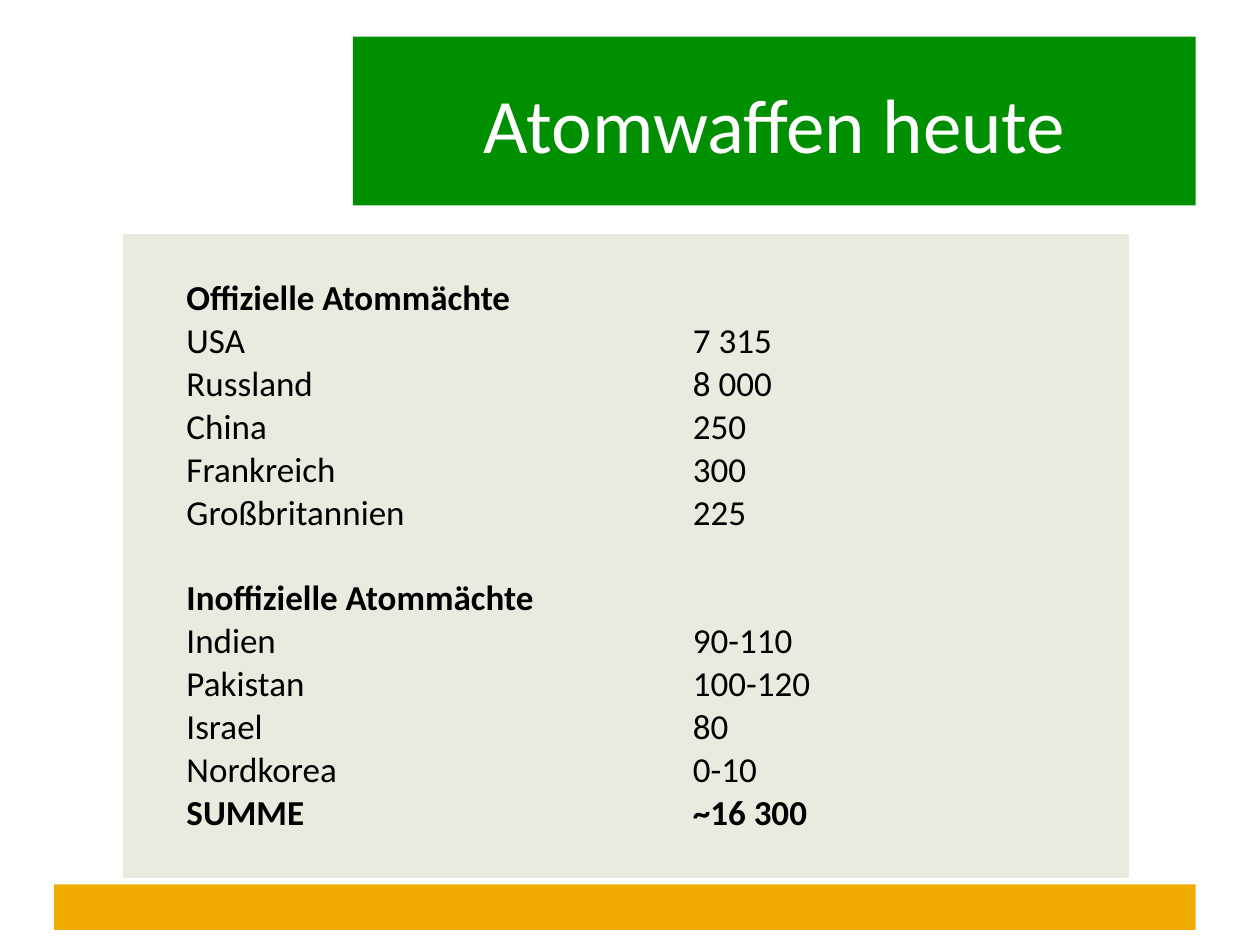
from pptx import Presentation
from pptx import util as u
from pptx.dml import color
from pptx.enum import shapes, text
from pptx.oxml import ns

COLORS = {
    "green": "008F00",
    "amber": "F0AB00",
    "panel": "EAEBDE",
    "black": "000000",
    "white": "FFFFFF",
}
PLAIN_TABLE_STYLE = "{2D5ABB26-0587-4C30-8999-92F81FD0307C}"
LINE_HEIGHT = 0.34
COLUMN_WIDTHS = (4.52, 3.46)
ROWS = [
    ("Offizielle Atommächte", ""),
    ("USA", "7 315"),
    ("Russland", "8 000"),
    ("China", "250"),
    ("Frankreich", "300"),
    ("Großbritannien", "225"),
    ("Inoffizielle Atommächte", ""),
    ("Indien", "90-110"),
    ("Pakistan", "100-120"),
    ("Israel", "80"),
    ("Nordkorea", "0-10"),
    ("SUMME", "~16 300"),
]


def rgb(name):
    return color.RGBColor.from_string(COLORS[name])


def write(frame, words, size=20, color_name="black", bold=False,
          align=text.PP_ALIGN.LEFT):
    paragraph = frame.paragraphs[0]
    paragraph.text = words
    paragraph.alignment = align
    paragraph.font.size = u.Pt(size)
    paragraph.font.name = "Calibri"
    paragraph.font.bold = bold
    paragraph.font.color.rgb = rgb(color_name)


class SlideBuilder:
    def __init__(self, slide):
        self.slide = slide

    def bar(self, left, top, width, height, color_name):
        shape = self.slide.shapes.add_shape(
            shapes.MSO_SHAPE.RECTANGLE, u.Inches(left), u.Inches(top),
            u.Inches(width), u.Inches(height))
        shape.shadow.inherit = False
        shape.fill.solid()
        shape.fill.fore_color.rgb = rgb(color_name)
        shape.line.fill.background()

    def title(self, words, left, top, width, height):
        title = self.slide.shapes.title
        title.left, title.top = u.Inches(left), u.Inches(top)
        title.width, title.height = u.Inches(width), u.Inches(height)
        title.text_frame.vertical_anchor = text.MSO_ANCHOR.MIDDLE
        title.text_frame.auto_size = text.MSO_AUTO_SIZE.NONE
        write(title.text_frame, words, size=44, color_name="white",
              align=text.PP_ALIGN.CENTER)
        title.element.getparent().append(title.element)

    def cell(self, cell, words, bold, anchor, indent):
        cell.margin_left = u.Inches(indent)
        cell.margin_right = cell.margin_top = cell.margin_bottom = 0
        cell.vertical_anchor = anchor
        cell.fill.solid()
        cell.fill.fore_color.rgb = rgb("panel")
        write(cell.text_frame, words, bold=bold)

    def table(self, rows, left, top):
        frame = self.slide.shapes.add_table(
            len(rows), len(COLUMN_WIDTHS), u.Inches(left), u.Inches(top),
            u.Inches(sum(COLUMN_WIDTHS)), u.Inches(LINE_HEIGHT * len(rows)))
        for style in frame.element.iter(ns.qn("a:tableStyleId")):
            style.text = PLAIN_TABLE_STYLE
        table = frame.table
        table.first_row = table.horz_banding = False
        for column, width in zip(table.columns, COLUMN_WIDTHS):
            column.width = u.Inches(width)
        for row, values in zip(table.rows, rows):
            is_heading = not values[1]
            is_total = values == rows[-1]
            is_strong = is_heading or is_total
            row.height = u.Inches(LINE_HEIGHT * (2 if is_strong else 1))
            anchor = text.MSO_ANCHOR.BOTTOM if is_heading else text.MSO_ANCHOR.TOP
            for cell, words, indent in zip(row.cells, values, (0.5, 0)):
                self.cell(cell, words, is_strong, anchor, indent)


def main():
    presentation = Presentation()
    presentation.slide_width = u.Inches(10)
    presentation.slide_height = u.Inches(7.5)
    builder = SlideBuilder(
        presentation.slides.add_slide(presentation.slide_layouts[5]))
    builder.bar(2.8, 0.29, 6.69, 1.34, "green")
    builder.bar(0.43, 7.02, 9.06, 0.36, "amber")
    builder.table(ROWS, 0.98, 1.86)
    builder.title("Atomwaffen heute", 2.8, 0.3, 6.7, 1.34)
    presentation.save("out.pptx")


if __name__ == "__main__":
    main()
